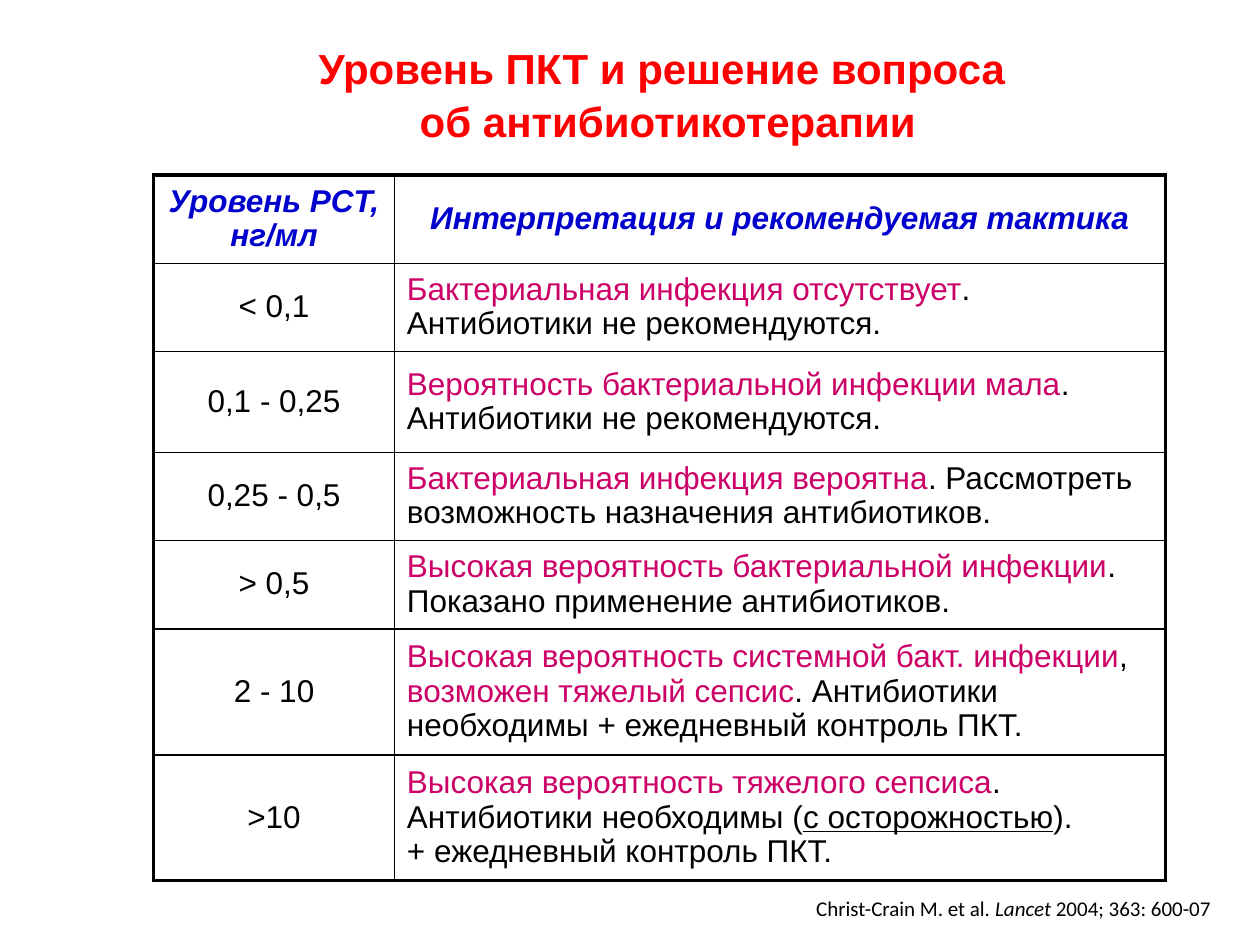
from lxml import etree
from pptx import Presentation
from pptx.dml.color import RGBColor
from pptx.enum.text import MSO_ANCHOR, PP_ALIGN
from pptx.oxml.ns import qn
from pptx.util import Inches, Pt

RED = RGBColor(0xFF, 0x00, 0x00)
BLUE = RGBColor(0x00, 0x00, 0xCC)
CRIMSON = RGBColor(0xCC, 0x00, 0x66)
BLACK = RGBColor(0x00, 0x00, 0x00)
THIN, THICK = Pt(1), Pt(2.25)

TITLE = "Уровень ПКТ и решение вопроса \vоб антибиотикотерапии"
HEADINGS = ["Уровень PCT, нг/мл", "Интерпретация и рекомендуемая тактика"]

# Each row: level, then (text, style) parts; "key" is a finding, "under" is underlined
LEVELS = [
    ("< 0,1", [("Бактериальная инфекция отсутствует", "key"),
               (". Антибиотики не рекомендуются.", "")]),
    ("0,1 - 0,25", [("Вероятность бактериальной инфекции мала", "key"),
                    (". Антибиотики не рекомендуются.", "")]),
    ("0,25 - 0,5", [("Бактериальная инфекция вероятна", "key"),
                    (". Рассмотреть возможность назначения антибиотиков.", "")]),
    ("> 0,5", [("Высокая вероятность бактериальной инфекции", "key"),
               (". Показано применение антибиотиков.", "")]),
    ("2 - 10", [("Высокая вероятность системной бакт. инфекции", "key"),
                (", ", ""),
                ("возможен тяжелый сепсис", "key"),
                (". Антибиотики необходимы + ежедневный контроль ПКТ.", "")]),
    (">10", [("Высокая вероятность тяжелого сепсиса", "key"),
             (". Антибиотики необходимы (", ""),
             ("с осторожностью", "under"),
             ("). \v+ ежедневный контроль ПКТ.", "")]),
]
CITATION = [("Christ-Crain M. et al. ", ""), ("Lancet", "italic"),
            (" 2004; 363: 600-07", "")]
COLUMN_WIDTHS = [1.91, 6.12]
ROW_HEIGHTS = [0.7, 0.7, 0.8, 0.7, 0.7, 1, 1]


class SlideBuilder:
    heading_font = "Arial"
    citation_font = "Calibri"

    def __init__(self, slide):
        self.slide = slide

    def set_font(self, paragraph, name, size, color, bold=False, italic=False):
        font = paragraph.font
        font.name, font.size = name, Pt(size)
        font.bold, font.italic = bold, italic
        font.color.rgb = color

    def add_parts(self, paragraph, parts):
        for text, style in parts:
            for index, line in enumerate(text.split("\v")):
                if index:
                    paragraph.add_line_break()
                run = paragraph.add_run()
                run.text = line
                if style == "key":
                    run.font.color.rgb = CRIMSON
                elif style == "under":
                    run.font.underline = True
                elif style == "italic":
                    run.font.italic = True

    def title(self, text, left, top, width, height):
        title = self.slide.shapes.title
        title.left, title.top = Inches(left), Inches(top)
        title.width, title.height = Inches(width), Inches(height)
        frame = title.text_frame
        frame.text = text
        frame.vertical_anchor = MSO_ANCHOR.MIDDLE
        heading = frame.paragraphs[0]
        heading.alignment = PP_ALIGN.CENTER
        heading.line_spacing = 1.05
        self.set_font(heading, self.heading_font, 24, RED, bold=True)

    def cell_borders(self, cell, widths):
        properties = cell._tc.get_or_add_tcPr()
        for index, (side, width) in enumerate(widths.items()):
            line = etree.Element(qn(f"a:ln{side}"), w=str(width))
            fill = etree.SubElement(line, qn("a:solidFill"))
            etree.SubElement(fill, qn("a:srgbClr"), val=str(BLACK))
            properties.insert(index, line)

    def table(self, headings, levels, left, top):
        rows, columns = len(ROW_HEIGHTS), len(COLUMN_WIDTHS)
        table = self.slide.shapes.add_table(
            rows, columns, Inches(left), Inches(top),
            Inches(sum(COLUMN_WIDTHS)), Inches(sum(ROW_HEIGHTS))).table
        table.first_row = table.horz_banding = False
        for column, width in zip(table.columns, COLUMN_WIDTHS):
            column.width = Inches(width)
        for row, height in zip(table.rows, ROW_HEIGHTS):
            row.height = Inches(height)

        contents = [[[(heading, "")] for heading in headings]]
        contents += [[[(level, "")], advice] for level, advice in levels]
        for r, row_parts in enumerate(contents):
            for c, parts in enumerate(row_parts):
                cell = table.cell(r, c)
                cell.fill.background()
                cell.vertical_anchor = MSO_ANCHOR.MIDDLE
                # Thick outer frame, thin inner lines
                self.cell_borders(cell, {
                    "L": THICK if c == 0 else THIN,
                    "R": THICK if c == columns - 1 else THIN,
                    "T": THICK if r == 0 else THIN,
                    "B": THICK if r == rows - 1 else THIN})
                paragraph = cell.text_frame.paragraphs[0]
                header = r == 0
                centred = header or c == 0
                paragraph.alignment = PP_ALIGN.CENTER if centred else PP_ALIGN.LEFT
                paragraph.line_spacing = 0.97
                self.add_parts(paragraph, parts)
                self.set_font(paragraph, self.heading_font, 18,
                              BLUE if header else BLACK, header, header)

    def citation(self, parts, left, top, width, height):
        box = self.slide.shapes.add_textbox(
            Inches(left), Inches(top), Inches(width), Inches(height))
        box.text_frame.word_wrap = True
        reference = box.text_frame.paragraphs[0]
        self.add_parts(reference, parts)
        self.set_font(reference, self.citation_font, 12, BLACK)


def main():
    deck = Presentation()
    deck.slide_width, deck.slide_height = Inches(10), Inches(7.5)
    title_only = deck.slide_layouts[5]
    builder = SlideBuilder(deck.slides.add_slide(title_only))

    # Heading, decision table, reference
    builder.title(TITLE, 1.3, 0.28, 8, 0.91)
    builder.table(HEADINGS, LEVELS, 1.22, 1.39)
    builder.citation(CITATION, 6.38, 7.06, 3.43, 0.3)
    deck.save("out.pptx")


if __name__ == "__main__":
    main()
